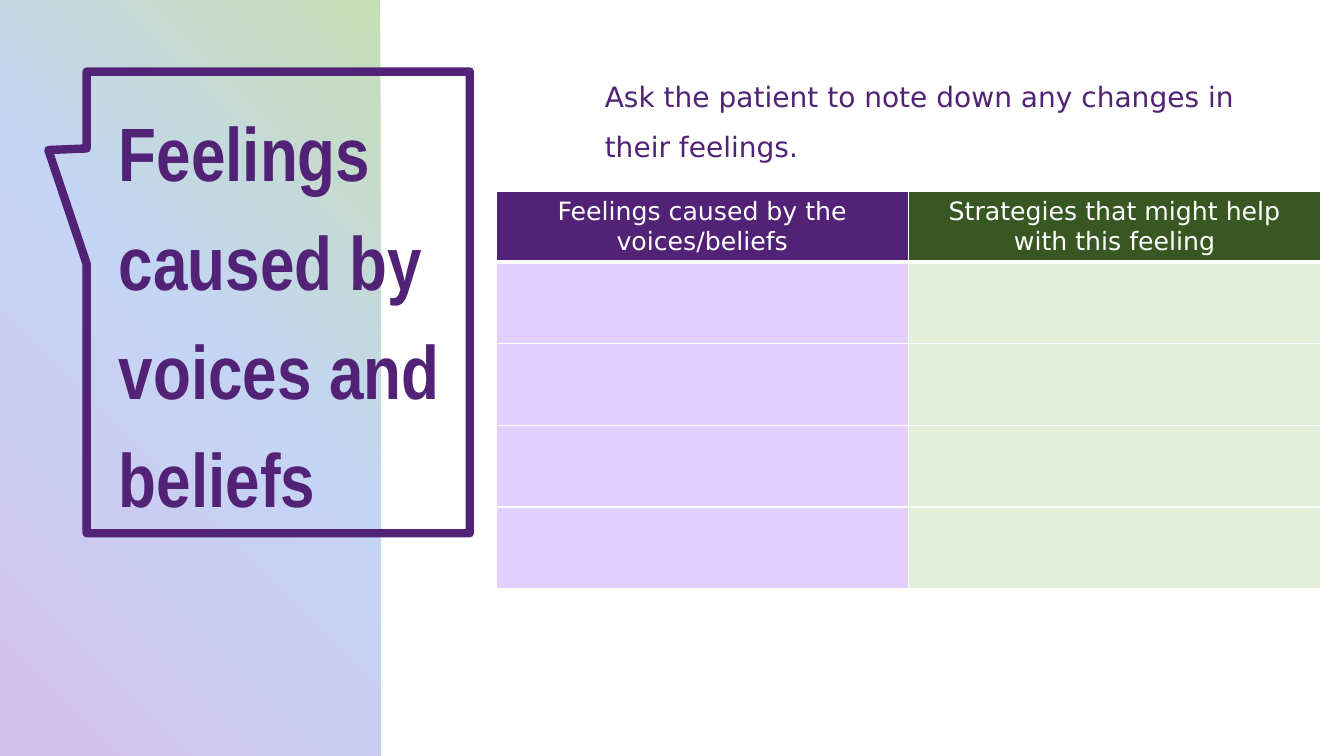
import pptx
import pptx.util
import pptx.oxml
import pptx.oxml.ns
import pptx.dml.color
import pptx.enum.shapes
import pptx.enum.text

Inches = pptx.util.Inches
Pt = pptx.util.Pt
RGBColor = pptx.dml.color.RGBColor
MSO_SHAPE = pptx.enum.shapes.MSO_SHAPE
PP_ALIGN = pptx.enum.text.PP_ALIGN
MSO_ANCHOR = pptx.enum.text.MSO_ANCHOR

PURPLE = RGBColor(0x51, 0x22, 0x75)
GREEN = RGBColor(0x38, 0x57, 0x23)
LILAC = RGBColor(0xE3, 0xD0, 0xFF)
PALE_GREEN = RGBColor(0xE2, 0xF0, 0xD9)
WHITE = RGBColor(0xFF, 0xFF, 0xFF)
PANEL_STOPS = [
    (0, RGBColor(0xD3, 0xC1, 0xED)),
    (56, RGBColor(0xC4, 0xD5, 0xF3)),
    (100, RGBColor(0xC5, 0xE0, 0xB4)),
]

TITLE_FONT = "Arial Narrow"
BODY_FONT = "DejaVu Sans"
HEADERS = [
    "Feelings caused by the voices/beliefs",
    "Strategies that might help with this feeling",
]
HEADER_FILLS = [PURPLE, GREEN]
BODY_FILLS = [LILAC, PALE_GREEN]
BLANK_ROWS = 4


def write_text(text_frame, text, *, size, font=BODY_FONT, color=PURPLE, bold=False,
               align=PP_ALIGN.LEFT, line_spacing=1.0, indent=0):
    paragraph = text_frame.paragraphs[0]
    paragraph.alignment = align
    paragraph.line_spacing = line_spacing
    if indent:
        properties = paragraph._p.get_or_add_pPr()
        properties.set("marL", str(Inches(indent)))
        properties.set("indent", "0")
    run = paragraph.add_run()
    run.text = text
    run.font.name = font
    run.font.size = Pt(size)
    run.font.bold = bold
    run.font.color.rgb = color


def add_text_box(slide, text, left, top, width, height, **text_format):
    box = slide.shapes.add_textbox(
        Inches(left), Inches(top), Inches(width), Inches(height))
    box.text_frame.word_wrap = True
    write_text(box.text_frame, text, **text_format)


def add_gradient_panel(slide):
    panel = slide.shapes.add_shape(
        MSO_SHAPE.RECTANGLE, 0, 0, Inches(3.77), Inches(7.5))
    panel.shadow.inherit = False
    panel.line.fill.background()
    stops = "".join(
        f'<a:gs pos="{position * 1000}"><a:srgbClr val="{color}"/></a:gs>'
        for position, color in PANEL_STOPS)
    # Circular gradient spreading from the bottom left corner
    gradient = pptx.oxml.parse_xml(
        f'<a:gradFill {pptx.oxml.ns.nsdecls("a")} rotWithShape="1">'
        f'<a:gsLst>{stops}</a:gsLst><a:path path="circle">'
        '<a:fillToRect t="100000" r="100000"/></a:path></a:gradFill>')
    geometry = panel._element.spPr.find(pptx.oxml.ns.qn("a:prstGeom"))
    geometry.addnext(gradient)


def add_callout(slide):
    callout = slide.shapes.add_shape(
        MSO_SHAPE.RECTANGULAR_CALLOUT,
        Inches(0.86), Inches(0.71), Inches(3.8), Inches(4.58))
    callout.adjustments[0] = -0.6
    callout.adjustments[1] = -0.33
    callout.shadow.inherit = False
    callout.fill.background()
    callout.line.color.rgb = PURPLE
    callout.line.width = Pt(6)


def set_borders(cell, bottom_width):
    properties = cell._tc.get_or_add_tcPr()
    widths = {"lnL": 1, "lnR": 1, "lnT": 1, "lnB": bottom_width}
    for position, (side, width) in enumerate(widths.items()):
        properties.insert(position, pptx.oxml.parse_xml(
            f'<a:{side} {pptx.oxml.ns.nsdecls("a")} w="{Pt(width)}"><a:solidFill>'
            f'<a:srgbClr val="{WHITE}"/></a:solidFill></a:{side}>'))


def add_feelings_table(slide):
    table = slide.shapes.add_table(
        BLANK_ROWS + 1, len(HEADERS),
        Inches(4.92), Inches(1.9), Inches(8.18), Inches(3.84)).table
    table.horz_banding = False
    for column in table.columns:
        column.width = Inches(4.09)
    for row_index, row in enumerate(table.rows):
        is_header = row_index == 0
        row.height = Inches(0.6 if is_header else 0.81)
        fills = HEADER_FILLS if is_header else BODY_FILLS
        for cell, fill, header in zip(row.cells, fills, HEADERS):
            cell.fill.solid()
            cell.fill.fore_color.rgb = fill
            set_borders(cell, bottom_width=3 if is_header else 1)
            if is_header:
                cell.vertical_anchor = MSO_ANCHOR.MIDDLE
                write_text(cell.text_frame, header, size=18, color=WHITE,
                           align=PP_ALIGN.CENTER)


def main():
    presentation = pptx.Presentation()
    presentation.slide_width = Inches(13.33)
    presentation.slide_height = Inches(7.5)
    slide = presentation.slides.add_slide(presentation.slide_layouts[6])

    # Title side
    add_gradient_panel(slide)
    add_callout(slide)
    add_text_box(slide, "Feelings caused by voices and beliefs",
                 0.89, 0.82, 4, 4.46, size=54, font=TITLE_FONT, bold=True,
                 line_spacing=1.2, indent=0.19)

    # Instruction and worksheet table
    add_text_box(slide, "Ask the patient to note down any changes in their feelings.",
                 5.9, 0.57, 6.77, 1.04, size=20, line_spacing=1.5)
    add_feelings_table(slide)

    presentation.save("out.pptx")


if __name__ == "__main__":
    main()
